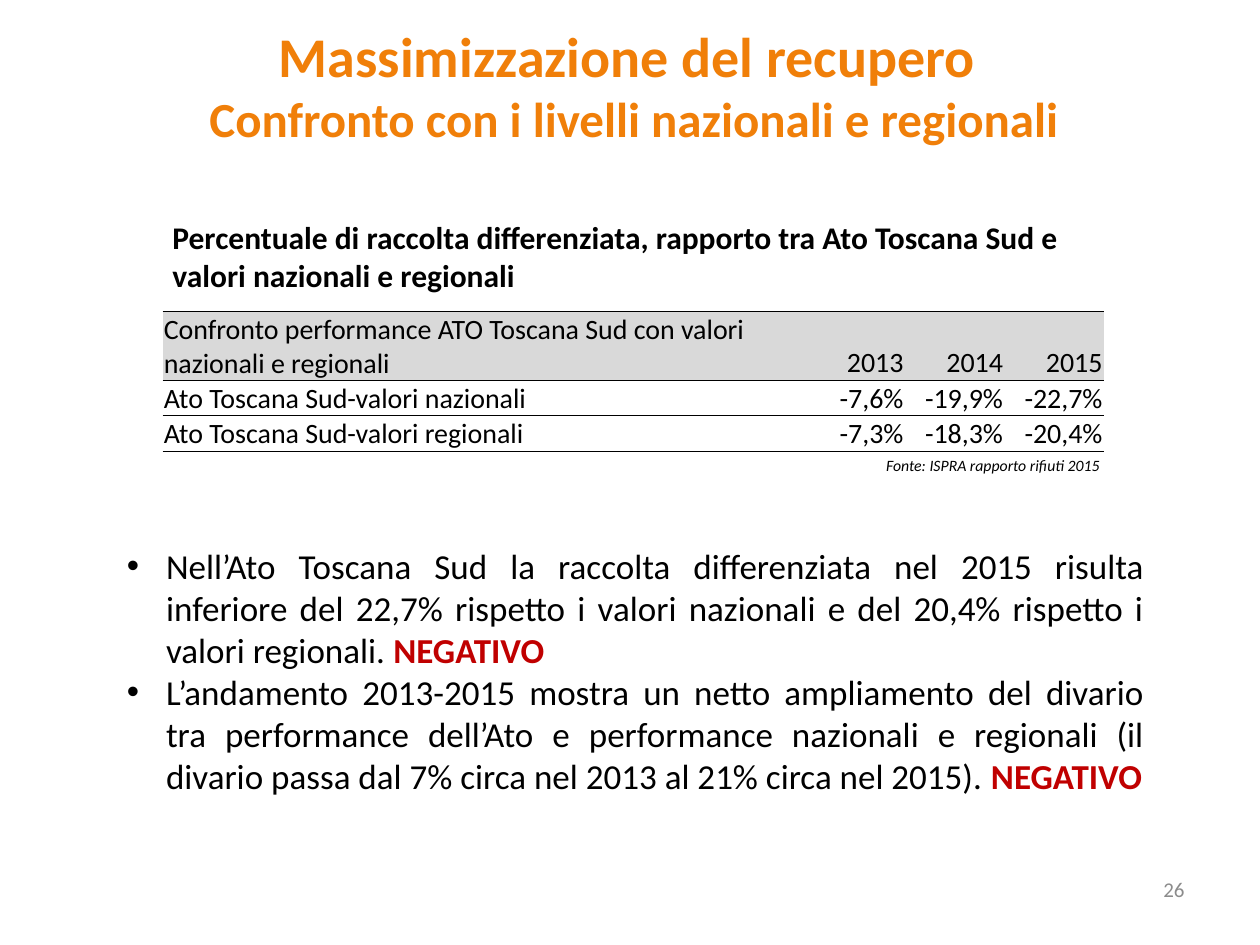
import pptx
import pptx.util
import pptx.dml.color
import pptx.enum.text
import pptx.oxml.ns
from lxml import etree

COLORS = {"title": "F07F09", "text": "000000", "alert": "C00000",
          "header": "D9D9D9", "number": "8C8C8C"}
FONT = "Calibri"
W, H = 10, 7.5

TITLE = [("Massimizzazione del recupero ", 32),
         ("Confronto con i livelli nazionali e regionali", 28)]
CAPTION = ("Percentuale di raccolta differenziata, rapporto tra Ato Toscana Sud "
           "e valori nazionali e regionali")
ROWS = [
    ("Confronto performance ATO Toscana Sud con valori nazionali e regionali",
     "2013", "2014", "2015"),
    ("Ato Toscana Sud-valori nazionali", "-7,6%", "-19,9%", "-22,7%"),
    ("Ato Toscana Sud-valori regionali", "-7,3%", "-18,3%", "-20,4%"),
]
COL_WIDTHS = [5.1] + [0.79] * 3
ROW_HEIGHTS = [0.55] + [0.28] * 2
SOURCE = "Fonte: ISPRA rapporto rifiuti 2015"
BULLETS = [
    ("Nell’Ato Toscana Sud la raccolta differenziata nel 2015 risulta inferiore "
     "del 22,7% rispetto i valori nazionali e del 20,4% rispetto i valori "
     "regionali. ", "NEGATIVO"),
    ("L’andamento 2013-2015 mostra un netto ampliamento del divario tra "
     "performance dell’Ato e performance nazionali e regionali (il divario passa "
     "dal 7% circa nel 2013 al 21% circa nel 2015). ", "NEGATIVO"),
]
PAGE = "26"

inch = pptx.util.Inches
qn = pptx.oxml.ns.qn
ALIGN = pptx.enum.text.PP_ALIGN
ANCHOR = pptx.enum.text.MSO_ANCHOR


def rgb(name):
    return pptx.dml.color.RGBColor.from_string(COLORS[name])


def style(font, size, color="text", bold=False, italic=False):
    font.name, font.size = FONT, pptx.util.Pt(size)
    font.bold, font.italic = bold, italic
    font.color.rgb = rgb(color)


def add_box(s, x, y, w, h, anchor=ANCHOR.TOP):
    tf = s.shapes.add_textbox(inch(x), inch(y), inch(w), inch(h)).text_frame
    tf.word_wrap = True
    tf.vertical_anchor = anchor
    return tf


def add_line(s, text, box, size, align, anchor=ANCHOR.TOP, **look):
    p = add_box(s, *box, anchor).paragraphs[0]
    p.text, p.alignment = text, align
    style(p.font, size, **look)


def set_borders(cell):
    """Thin rules above and below the cell, none at its sides."""
    tc_pr = cell._tc.get_or_add_tcPr()
    for i, side in enumerate(("lnL", "lnR", "lnT", "lnB")):
        ln = etree.Element(qn("a:" + side), w="6350")
        if side in ("lnT", "lnB"):
            fill = etree.SubElement(ln, qn("a:solidFill"))
            etree.SubElement(fill, qn("a:srgbClr"), val=COLORS["text"])
        else:
            etree.SubElement(ln, qn("a:noFill"))
        tc_pr.insert(i, ln)


def add_comparison(s, x, y):
    table = s.shapes.add_table(len(ROWS), len(COL_WIDTHS), inch(x), inch(y),
                               inch(sum(COL_WIDTHS)), inch(sum(ROW_HEIGHTS))).table
    table.first_row = table.horz_banding = False
    for col, width in zip(table.columns, COL_WIDTHS):
        col.width = inch(width)
    for i, (values, height) in enumerate(zip(ROWS, ROW_HEIGHTS)):
        table.rows[i].height = inch(height)
        for j, value in enumerate(values):
            cell = table.cell(i, j)
            cell.margin_left = cell.margin_right = cell.margin_top = inch(0.01)
            cell.margin_bottom = 0
            cell.vertical_anchor = ANCHOR.BOTTOM
            if i == 0:
                cell.fill.solid()
                cell.fill.fore_color.rgb = rgb("header")
            else:
                cell.fill.background()
            set_borders(cell)
            p = cell.text_frame.paragraphs[0]
            p.text = value
            p.alignment = ALIGN.RIGHT if j else ALIGN.LEFT
            style(p.font, 16)


def add_bullets(s, box):
    tf = add_box(s, *box)
    for i, (text, verdict) in enumerate(BULLETS):
        p = tf.add_paragraph() if i else tf.paragraphs[0]
        p.alignment = ALIGN.JUSTIFY
        p_pr = p._p.get_or_add_pPr()
        p_pr.set("marL", str(inch(0.31)))
        p_pr.set("indent", str(-inch(0.31)))
        etree.SubElement(p_pr, qn("a:buFont"), typeface="Arial")
        etree.SubElement(p_pr, qn("a:buChar"), char="•")
        for part, color in ((text, "text"), (verdict, "alert")):
            r = p.add_run()
            r.text = part
            style(r.font, 20, color, bold=color == "alert")


def main():
    prs = pptx.Presentation()
    prs.slide_width, prs.slide_height = inch(W), inch(H)
    s = prs.slides.add_slide(prs.slide_layouts[6])

    p = add_box(s, 0.03, 0.12, W, 1.12).paragraphs[0]
    p.alignment = ALIGN.CENTER
    for i, (text, size) in enumerate(TITLE):
        if i:
            p.add_line_break()
        r = p.add_run()
        r.text = text
        style(r.font, size, "title", bold=True)

    add_bullets(s, (0.91, 4.27, 8.27, 2.12))
    add_line(s, SOURCE, (6.3, 3.57, 3.16, 0.25), 9, ALIGN.CENTER, italic=True)
    add_line(s, CAPTION, (1.27, 1.68, 7.48, 1.01), 18, ALIGN.LEFT, bold=True)
    add_comparison(s, 1.29, 2.47)
    add_line(s, PAGE, (7.17, 6.9, 2.33, 0.31), 12, ALIGN.RIGHT, ANCHOR.MIDDLE,
             color="number")
    prs.save("out.pptx")


if __name__ == "__main__":
    main()
